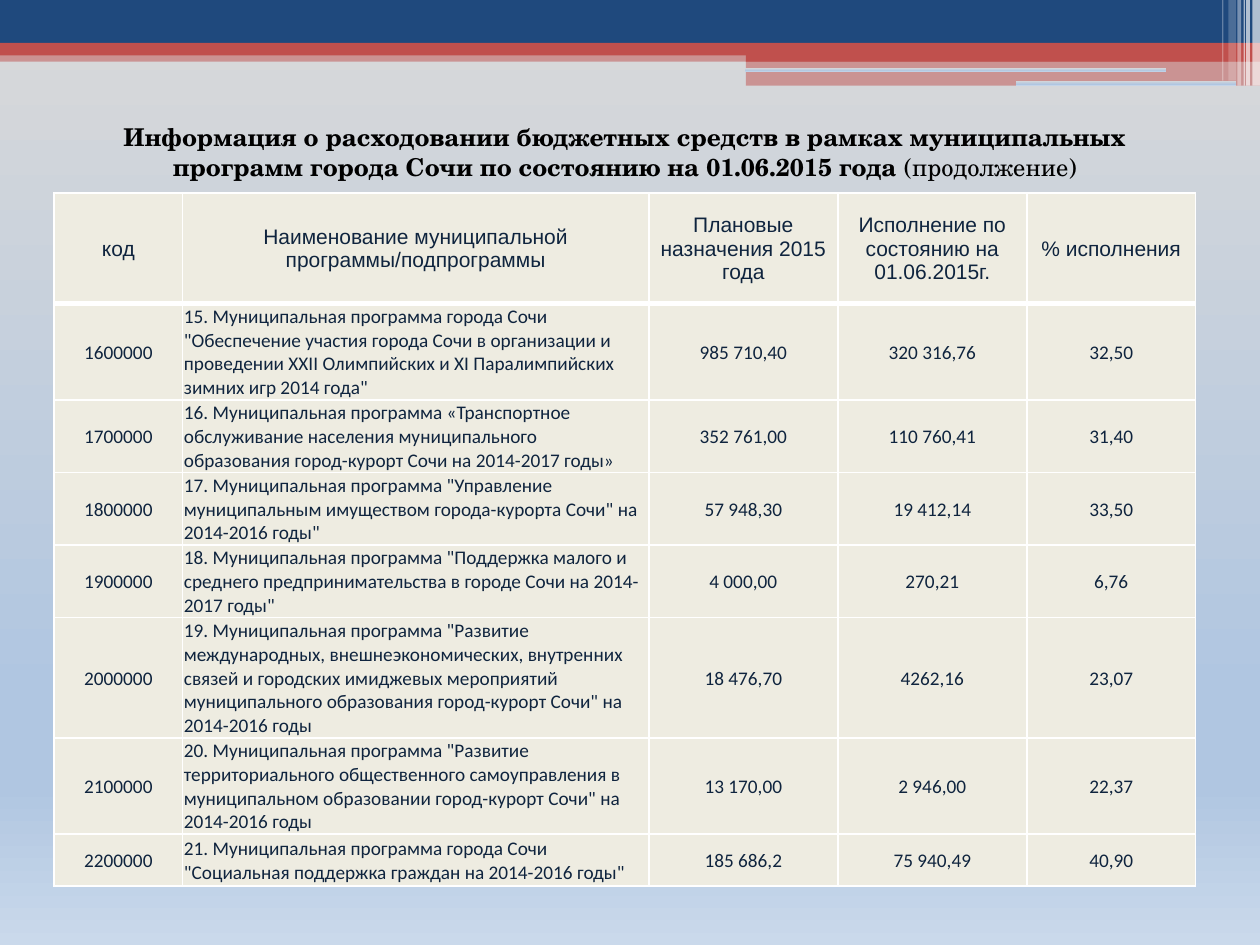
import pptx
import pptx.util
import pptx.dml.color
import pptx.enum.shapes
import pptx.enum.text
import pptx.oxml.ns
import lxml.etree

Inches = pptx.util.Inches
Align = pptx.enum.text.PP_ALIGN
Shape = pptx.enum.shapes.MSO_SHAPE
qn = pptx.oxml.ns.qn

INK = {"navy": "1F497D", "red": "C0504D", "white": "FFFFFF",
       "cream": "EEECE1", "dark": "0F243E", "black": "000000"}
SKY = [(0, "D9D9D9"), (74, "B0C6E1"), (83, "B0C6E1"), (100, "CAD9EB")]


def tint(name):
    return pptx.dml.color.RGBColor.from_string(INK[name])


def write(para, text, font="Calibri", size=11, color="dark", bold=False,
          align=Align.CENTER):
    para.alignment = align
    run = para.add_run()
    run.text = text
    run.font.name = font
    run.font.size = pptx.util.Pt(size)
    run.font.bold = bold
    run.font.color.rgb = tint(color)


def shade(fill, root):
    """Fill with the sky gradient, top to bottom; root holds the fill's XML."""
    fill.gradient()
    fill.gradient_angle = 270
    stops = root.find(".//" + qn("a:gsLst"))
    for old in list(stops):
        stops.remove(old)
    for spot, color in SKY:
        stop = lxml.etree.SubElement(stops, qn("a:gs"), pos=str(spot * 1000))
        lxml.etree.SubElement(stop, qn("a:srgbClr"), val=color)


def edge(cell, side, width):
    line = lxml.etree.Element(qn("a:ln" + side), w=str(pptx.util.Pt(width)))
    fill = lxml.etree.SubElement(line, qn("a:solidFill"))
    lxml.etree.SubElement(fill, qn("a:srgbClr"), val=INK["white"])
    return line


class Deck:
    def __init__(self):
        self.show = pptx.Presentation()
        self.show.slide_width = Inches(10)
        self.show.slide_height = Inches(7.5)
        self.slide = self.show.slides.add_slide(self.show.slide_layouts[6])
        shade(self.slide.background.fill, self.slide.element)

    def block(self, box, color=None, alpha=100, kind=Shape.RECTANGLE):
        part = self.slide.shapes.add_shape(kind, *map(Inches, box))
        part.shadow.inherit = False
        part.line.fill.background()
        if color is None:
            shade(part.fill, part.element)
            return
        part.fill.solid()
        part.fill.fore_color.rgb = tint(color)
        if alpha < 100:
            node = part.element.spPr.find(".//" + qn("a:srgbClr"))
            lxml.etree.SubElement(node, qn("a:alpha"), val=str(alpha * 1000))

    def title(self, box, main, rest):
        frame = self.slide.shapes.add_textbox(*map(Inches, box)).text_frame
        frame.word_wrap = True
        frame.auto_size = pptx.enum.text.MSO_AUTO_SIZE.SHAPE_TO_FIT_TEXT
        look = {"font": "TeX Gyre Schola", "size": 14, "color": "black"}
        write(frame.paragraphs[0], main, bold=True, **look)
        write(frame.paragraphs[0], rest, **look)

    def cell(self, cell, text, row, col):
        cell.margin_left = cell.margin_right = cell.margin_top = Inches(0.01)
        cell.margin_bottom = 0
        cell.vertical_anchor = pptx.enum.text.MSO_ANCHOR.MIDDLE
        look = {"font": "Arial", "size": 12} if row == 0 else {}
        if row and col == 1:
            look["align"] = Align.LEFT
        write(cell.text_frame.paragraphs[0], text, **look)
        # Borders go before the fill; the line under the head is thick
        props = cell._tc.get_or_add_tcPr()
        for side in "LRTB":
            thick = (row, side) in ((0, "B"), (1, "T"))
            props.append(edge(cell, side, 3 if thick else 1))
        cell.fill.solid()
        cell.fill.fore_color.rgb = tint("cream")

    def table(self, box, wide, high, rows):
        frame = self.slide.shapes.add_table(len(rows), len(wide),
                                            *map(Inches, box))
        grid = frame.table
        grid.first_row = grid.horz_banding = False
        for col, width in zip(grid.columns, wide):
            col.width = Inches(width)
        for row, height in zip(grid.rows, high):
            row.height = Inches(height)
        for r, row in enumerate(rows):
            for c, text in enumerate(row):
                self.cell(grid.cell(r, c), text, r, c)
        frame.height = Inches(box[3])


BANDS = [
    ((0, 0.4, 10, 0.09), "red", 50),
    ((0, 0, 10, 0.34), "navy", 100),
    ((0, 0.34, 10, 0.1), "red", 100),
    ((5.92, 0.39, 4.08, 0.1), "red", 100),
    ((5.92, 0.48, 4.08, 0.2), "red", 50),
]
SLOTS = [(5.91, 0.54, 3.35, 0.03), (8.06, 0.64, 1.75, 0.04)]
# Left, width, height, opacity
STRIPES = [(9.94, 0.06, 0.68, 65), (9.89, 0.03, 0.68, 65),
           (9.87, 0.01, 0.68, 60), (9.82, 0.03, 0.68, 40),
           (9.75, 0.06, 0.64, 20), (9.7, 0.01, 0.64, 30)]

ROWS = [
    ("код", "Наименование муниципальной программы/подпрограммы",
     "Плановые назначения 2015 года",
     "Исполнение по состоянию на 01.06.2015г.", "% исполнения"),
    ("1600000", '15. Муниципальная программа города Сочи "Обеспечение участия '
     'города Сочи в организации и проведении XXII Олимпийских и XI '
     'Паралимпийских зимних игр 2014 года"',
     "985 710,40", "320 316,76", "32,50"),
    ("1700000", "16. Муниципальная программа «Транспортное обслуживание "
     "населения муниципального образования город-курорт Сочи на "
     "2014-2017 годы»", "352 761,00", "110 760,41", "31,40"),
    ("1800000", '17. Муниципальная программа "Управление муниципальным '
     'имуществом города-курорта Сочи" на 2014-2016 годы"',
     "57 948,30", "19 412,14", "33,50"),
    ("1900000", '18. Муниципальная программа "Поддержка малого и среднего '
     'предпринимательства в городе Сочи на 2014-2017 годы"',
     "4 000,00", "270,21", "6,76"),
    ("2000000", '19. Муниципальная программа "Развитие международных, '
     'внешнеэкономических, внутренних связей и городских имиджевых '
     'мероприятий муниципального образования город-курорт Сочи" на '
     '2014-2016 годы', "18 476,70", "4262,16", "23,07"),
    ("2100000", '20. Муниципальная программа "Развитие территориального '
     'общественного самоуправления в муниципальном образовании '
     'город-курорт Сочи" на 2014-2016 годы',
     "13 170,00", "2 946,00", "22,37"),
    ("2200000", '21. Муниципальная программа города Сочи "Социальная '
     'поддержка граждан на 2014-2016 годы"',
     "185 686,2", "75 940,49", "40,90"),
]


def main():
    deck = Deck()
    # Top banner
    for box, color, alpha in BANDS:
        deck.block(box, color, alpha)
    for box in SLOTS:
        deck.block(box, kind=Shape.ROUNDED_RECTANGLE)
    for left, width, height, alpha in STRIPES:
        deck.block((left, 0, width, height), "white", alpha)
    # Budget table
    deck.table((0.43, 1.53, 9.06, 5.37), [1.02, 3.7, 1.5, 1.5, 1.34],
               [0.88] + [0.41] * 4 + [0.66] + [0.41] * 2, ROWS)
    # Heading
    deck.title((0.51, 0.92, 8.9, 0.57),
               "Информация о расходовании бюджетных средств в рамках "
               "муниципальных программ города Сочи по состоянию на "
               "01.06.2015 года ", "(продолжение)")
    deck.show.save("out.pptx")


if __name__ == "__main__":
    main()
